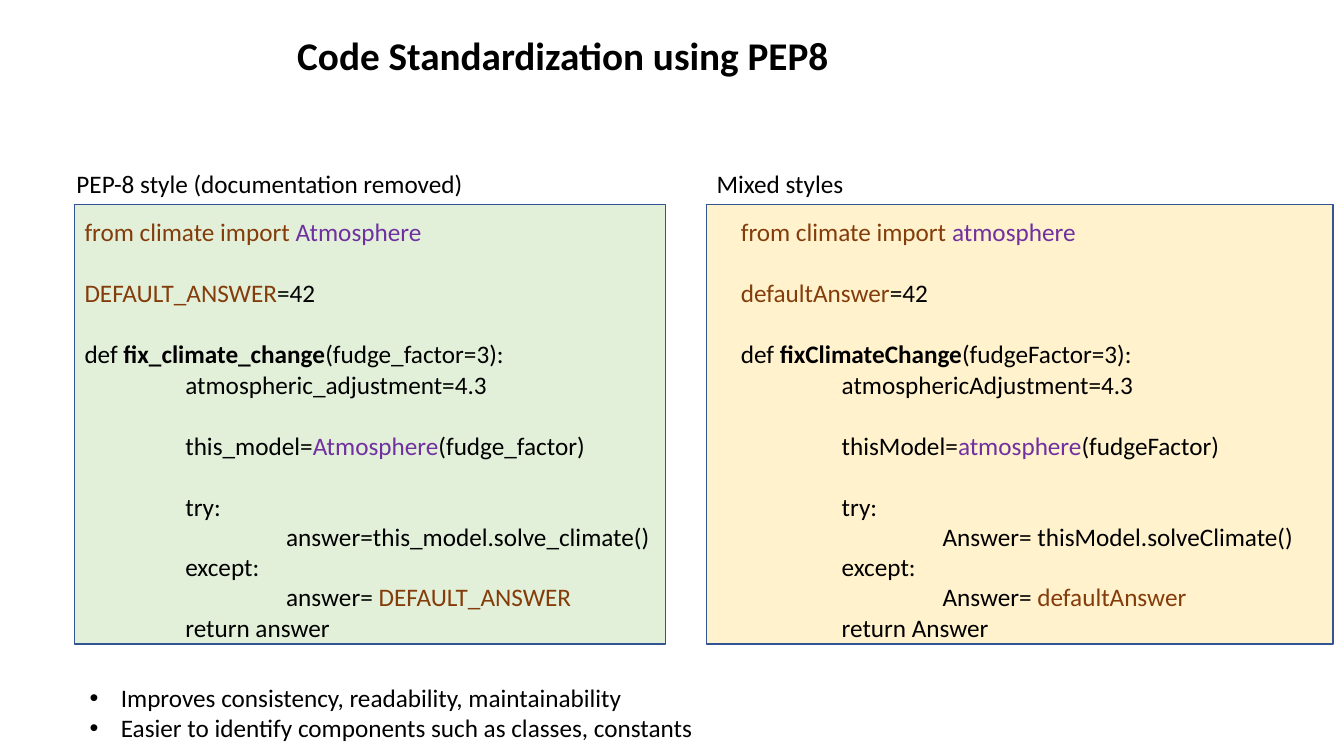
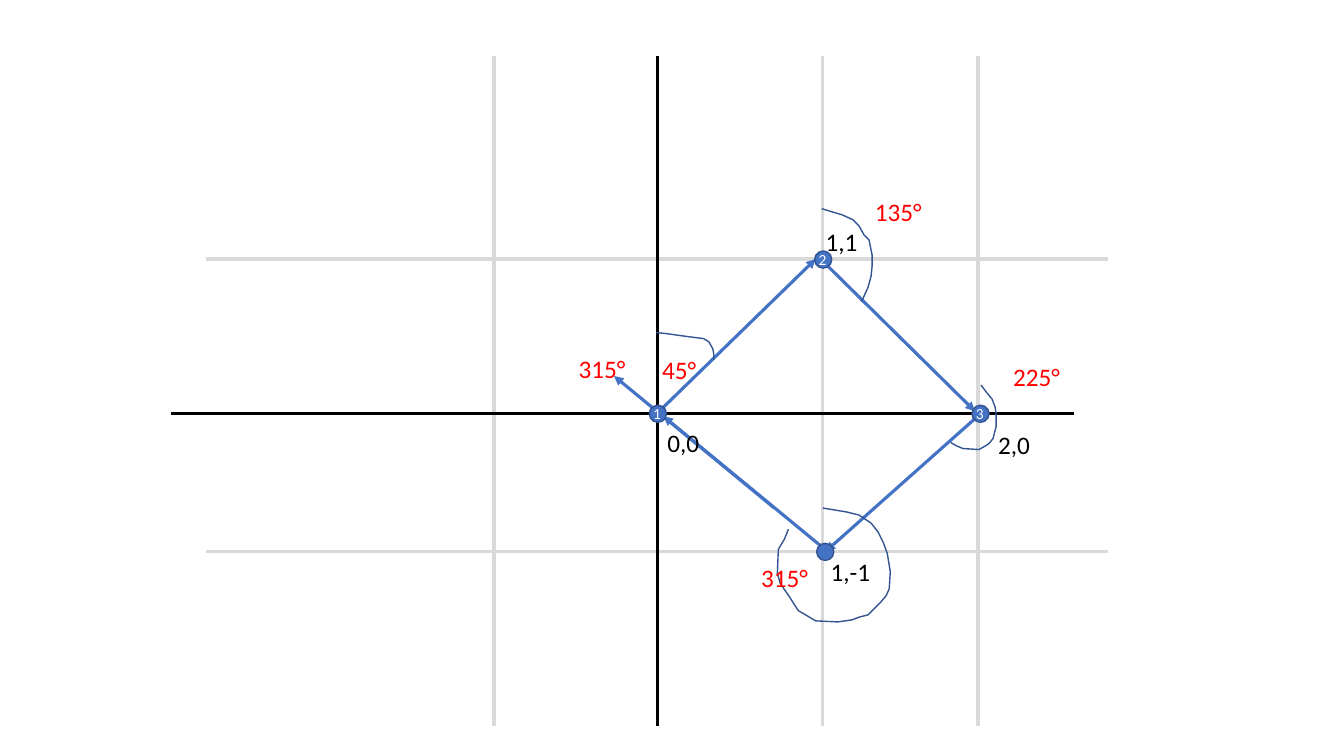
from dataclasses import dataclass
from typing import Any, NamedTuple, Optional

import lxml.etree
import pptx
import pptx.dml.color
import pptx.enum.shapes
import pptx.enum.text
import pptx.oxml.ns
import pptx.util

PX = 9144  # EMU in one px, 100 px to the inch


@dataclass(frozen=True)
class Theme:
    font: str = "Calibri"
    title_size: int = 28
    body_size: int = 18
    number_size: int = 11
    blank_line: int = 22
    thin_line: float = 1
    thick_line: float = 2.25
    black: str = "000000"
    white: str = "FFFFFF"
    keyword: str = "843C0B"
    class_name: str = "7030A0"
    angle: str = "FF0000"
    grid: str = "D9D9D9"
    node: str = "4472C4"
    outline: str = "325491"
    good_panel: str = "E2F0D9"
    mixed_panel: str = "FFF2CC"


THEME = Theme()


class Box(NamedTuple):
    left: int
    top: int
    width: int
    height: int


class Point(NamedTuple):
    x: int
    y: int


class Run(NamedTuple):
    text: str
    color: str = THEME.black
    bold: bool = False


@dataclass(frozen=True)
class Line:
    runs: tuple[Run, ...]
    depth: int = 0
    gap: bool = False
    bullet: bool = False


@dataclass(frozen=True)
class CodeNames:
    class_name: str
    constant: str
    function: str
    parameter: str
    adjustment: str
    model: str
    solver: str
    answer: str


@dataclass(frozen=True)
class CodePanel:
    heading: str
    heading_box: Box
    panel_box: Box
    code_box: Box
    color: str
    names: CodeNames


@dataclass(frozen=True)
class Label:
    text: str
    box: Box
    color: str = THEME.black


@dataclass(frozen=True)
class Segment:
    start: Point
    end: Point
    color: str
    arrow: bool = False


PANELS = (
    CodePanel(
        "Mixed styles", Box(701, 162, 147, 40), Box(701, 203, 621, 436),
        Box(725, 210, 574, 438), THEME.mixed_panel,
        CodeNames("atmosphere", "defaultAnswer", "fixClimateChange", "fudgeFactor",
                  "atmosphericAdjustment", "thisModel", "solveClimate", "Answer"),
    ),
    CodePanel(
        "PEP-8 style (documentation removed)", Box(66, 162, 408, 40),
        Box(74, 203, 586, 436), Box(74, 210, 586, 438), THEME.good_panel,
        CodeNames("Atmosphere", "DEFAULT_ANSWER", "fix_climate_change", "fudge_factor",
                  "atmospheric_adjustment", "this_model", "solve_climate", "answer"),
    ),
)
BENEFITS = (
    "Improves consistency, readability, maintainability",
    "Easier to identify components such as classes, constants",
)

GRID_COLUMNS, GRID_ROWS = (490, 816, 970), (257, 547)
AXIS_X, AXIS_Y = 652, 410
COLUMN_TOP, COLUMN_BOTTOM = 56, 720
GRID_LEFT, AXIS_LEFT, ROW_LENGTH = 204, 170, 895
ARROWS = (
    (Point(658, 404), Point(809, 257)),
    (Point(817, 260), Point(967, 408)),
    (Point(973, 410), Point(819, 547)),
    (Point(817, 544), Point(658, 413)),
    (Point(768, 504), Point(609, 373)),
)
NODES = (
    (Point(652, 410), "1"), (Point(816, 257), "2"),
    (Point(972, 410), "3"), (Point(818, 547), ""),
)
NODE_SIZE, NUMBER_WIDTH, NUMBER_HEIGHT = 17, 28, 29
LABELS = (
    Label("0,0", Box(652, 419, 52, 40)),
    Label("1,1", Box(809, 220, 52, 40)),
    Label("2,0", Box(980, 421, 52, 40)),
    Label("1,-1", Box(814, 547, 60, 40)),
    Label("45°", Box(647, 347, 54, 40), THEME.angle),
    Label("135°", Box(858, 190, 67, 40), THEME.angle),
    Label("225°", Box(995, 354, 67, 40), THEME.angle),
    Label("315°", Box(745, 553, 67, 40), THEME.angle),
    Label("315°", Box(564, 346, 67, 40), THEME.angle),
)
ANGLE_ARCS = (
    ((973, 382), (979, 390), (984, 396), (987, 404), (988, 411), (988, 423),
     (985, 435), (981, 440), (978, 442), (971, 446), (955, 445), (948, 442), (943, 439)),
    ((815, 207), (828, 211), (835, 213), (846, 218), (852, 224), (857, 233),
     (862, 238), (865, 253), (865, 264), (864, 274), (861, 285), (856, 296), (854, 299)),
    ((651, 330), (661, 331), (675, 333), (698, 336), (703, 339), (707, 346),
     (708, 351), (708, 357)),
    ((816, 504), (840, 508), (852, 511), (864, 519), (871, 528), (876, 538),
     (880, 549), (883, 567), (882, 584), (879, 591), (873, 598), (867, 604),
     (861, 610), (853, 612), (845, 615), (831, 617), (809, 616), (799, 610),
     (792, 606), (788, 600), (783, 592), (776, 582), (774, 579), (771, 569),
     (772, 545), (778, 535), (782, 525)),
)


def emu(*lengths: int) -> list[pptx.util.Emu]:
    return [pptx.util.Emu(length * PX) for length in lengths]


def rgb(color: str) -> pptx.dml.color.RGBColor:
    return pptx.dml.color.RGBColor.from_string(color)


def set_attributes(target: Any, values: dict[str, Any]) -> None:
    for name, value in values.items():
        setattr(target, name, value)


def add_text(slide: Any, box: Box, lines: list[Line], size: int = THEME.body_size,
             bold: bool = False) -> None:
    frame = slide.shapes.add_textbox(*emu(*box)).text_frame
    set_attributes(frame, {
        "word_wrap": False,
        "auto_size": pptx.enum.text.MSO_AUTO_SIZE.SHAPE_TO_FIT_TEXT,
    })
    for index, line in enumerate(lines):
        paragraph = frame.add_paragraph() if index else frame.paragraphs[0]
        if line.gap:
            paragraph.space_before = pptx.util.Pt(THEME.blank_line)
        indent_paragraph(paragraph, line)
        for part in line.runs:
            run = paragraph.add_run()
            run.text = part.text
            set_attributes(run.font, {
                "name": THEME.font,
                "size": pptx.util.Pt(size),
                "bold": bold or part.bold,
            })
            run.font.color.rgb = rgb(part.color)


def indent_paragraph(paragraph: Any, line: Line) -> None:
    """Indent code by one inch a level, or hang the text after a bullet."""
    properties = paragraph._p.get_or_add_pPr()
    hanging = 31 if line.bullet else 0
    properties.set("marL", str((line.depth * 100 + hanging) * PX))
    properties.set("indent", str(-hanging * PX))
    if line.bullet:
        qn = pptx.oxml.ns.qn
        lxml.etree.SubElement(properties, qn("a:buFont"), typeface="Arial")
        lxml.etree.SubElement(properties, qn("a:buChar"), char="•")


def style_shape(shape: Any, fill: Optional[str]) -> None:
    shape.shadow.inherit = False
    if fill:
        shape.fill.solid()
        shape.fill.fore_color.rgb = rgb(fill)
    else:
        shape.fill.background()
    shape.line.color.rgb = rgb(THEME.outline)
    shape.line.width = pptx.util.Pt(THEME.thin_line)


def add_segment(slide: Any, segment: Segment) -> None:
    connector = slide.shapes.add_connector(
        pptx.enum.shapes.MSO_CONNECTOR.STRAIGHT, *emu(*segment.start, *segment.end))
    connector.line.color.rgb = rgb(segment.color)
    connector.line.width = pptx.util.Pt(THEME.thick_line)
    qn = pptx.oxml.ns.qn
    properties = connector._element.spPr
    if segment.arrow:
        lxml.etree.SubElement(properties.find(qn("a:ln")), qn("a:tailEnd"), type="triangle")
    lxml.etree.SubElement(properties, qn("a:effectLst"))


def add_arc(slide: Any, points: tuple[tuple[int, int], ...]) -> None:
    builder = slide.shapes.build_freeform(*points[0], scale=PX)
    builder.add_line_segments(points[1:], close=False)
    style_shape(builder.convert_to_shape(), None)


def code_lines(names: CodeNames) -> list[Line]:
    """Write the same program with the given identifiers."""
    class_name = Run(names.class_name, THEME.class_name)
    constant = Run(names.constant, THEME.keyword)
    return [
        Line((Run("from climate import ", THEME.keyword), class_name)),
        Line((constant, Run("=42")), gap=True),
        Line((Run("def "), Run(names.function, bold=True),
              Run(f"({names.parameter}=3):")), gap=True),
        Line((Run(f"{names.adjustment}=4.3"),), 1),
        Line((Run(f"{names.model}="), class_name, Run(f"({names.parameter})")), 1, gap=True),
        Line((Run("try:"),), 1, gap=True),
        Line((Run(f"{names.answer}={' ' if names.answer.istitle() else ''}"
                  f"{names.model}.{names.solver}()"),), 2),
        Line((Run("except:"),), 1),
        Line((Run(f"{names.answer}= "), constant), 2),
        Line((Run(f"return {names.answer}"),), 1),
    ]


def build_code_slide(slide: Any) -> None:
    add_text(slide, Box(285, 26, 553, 57), [Line((Run("Code Standardization using PEP8"),))],
             THEME.title_size, bold=True)
    for panel in PANELS:
        rectangle = slide.shapes.add_shape(
            pptx.enum.shapes.MSO_SHAPE.RECTANGLE, *emu(*panel.panel_box))
        style_shape(rectangle, panel.color)
        add_text(slide, panel.heading_box, [Line((Run(panel.heading),))])
        add_text(slide, panel.code_box, code_lines(panel.names))
    add_text(slide, Box(79, 672, 625, 71),
             [Line((Run(benefit),), bullet=True) for benefit in BENEFITS])


def column(x: int, color: str) -> Segment:
    return Segment(Point(x, COLUMN_TOP), Point(x, COLUMN_BOTTOM), color)


def row(y: int, left: int, color: str) -> Segment:
    return Segment(Point(left, y), Point(left + ROW_LENGTH, y), color)


def build_bearing_slide(slide: Any) -> None:
    segments = [column(x, THEME.grid) for x in GRID_COLUMNS]
    segments += [row(y, GRID_LEFT, THEME.grid) for y in GRID_ROWS]
    segments += [column(AXIS_X, THEME.black), row(AXIS_Y, AXIS_LEFT, THEME.black)]
    segments += [Segment(start, end, THEME.node, True) for start, end in ARROWS]
    for segment in segments:
        add_segment(slide, segment)
    for points in ANGLE_ARCS:
        add_arc(slide, points)
    for label in LABELS:
        add_text(slide, label.box, [Line((Run(label.text, label.color),))])
    for center, number in NODES:
        corner = (center.x - NODE_SIZE // 2, center.y - NODE_SIZE // 2)
        dot = slide.shapes.add_shape(
            pptx.enum.shapes.MSO_SHAPE.OVAL, *emu(*corner, NODE_SIZE, NODE_SIZE))
        style_shape(dot, THEME.node)
        if number:
            box = Box(center.x - NUMBER_WIDTH // 2, center.y - NUMBER_HEIGHT // 2,
                      NUMBER_WIDTH, NUMBER_HEIGHT)
            add_text(slide, box, [Line((Run(number, THEME.white),))], THEME.number_size)


def main() -> None:
    presentation = pptx.Presentation()
    presentation.slide_width, presentation.slide_height = emu(1333, 750)
    for build in (build_code_slide, build_bearing_slide):
        build(presentation.slides.add_slide(presentation.slide_layouts[6]))
    presentation.save("out.pptx")


if __name__ == "__main__":
    main()
